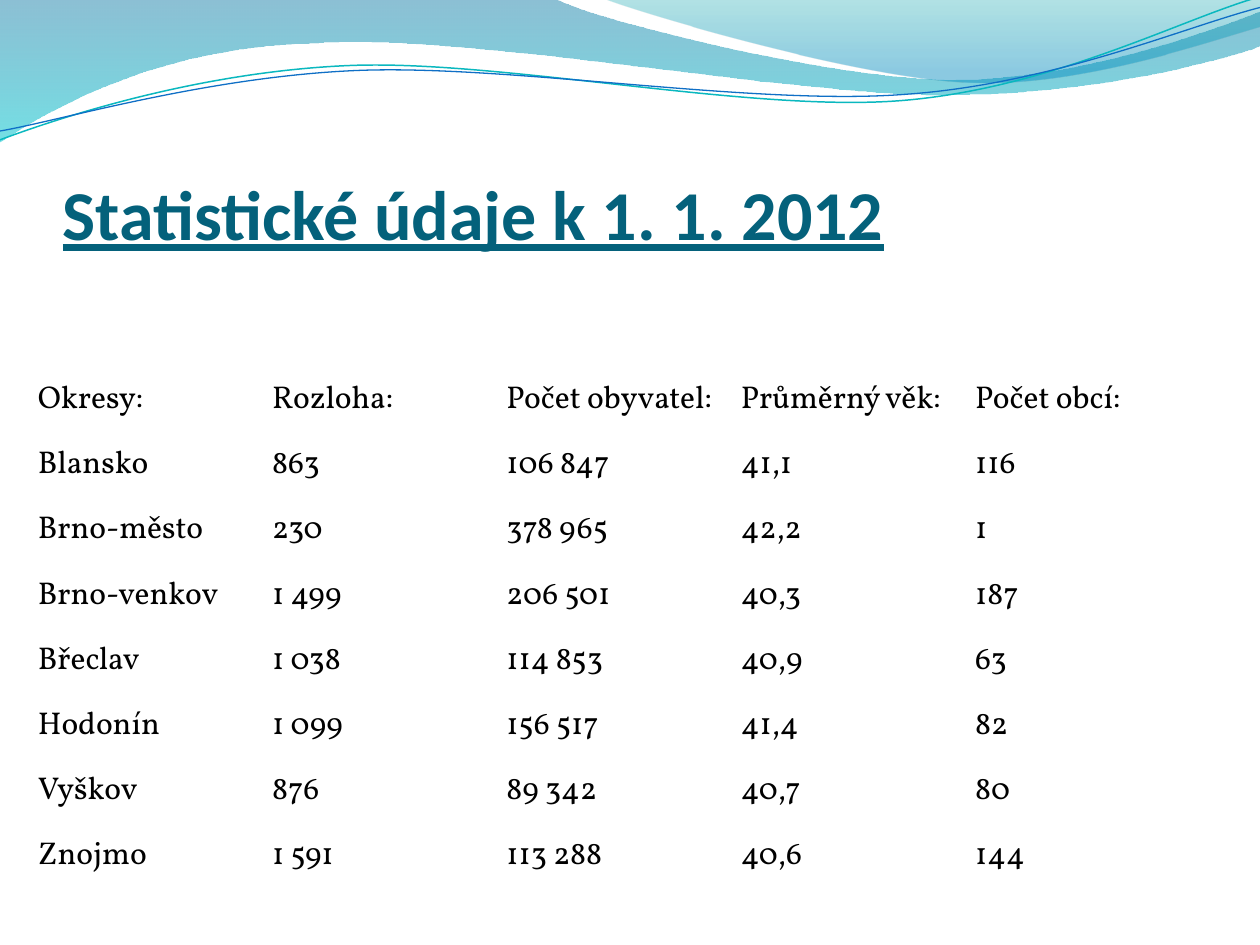
from math import cos, radians, sin

from lxml.etree import SubElement
from pptx import Presentation
from pptx.dml.color import RGBColor
from pptx.enum.text import MSO_ANCHOR as Anchor
from pptx.oxml.ns import qn
from pptx.util import Inches, Pt

COLORS = {
    "title": "04617B",
    "text": "000000",
    "deep": "0074A1",
    "aqua": "00C6CF",
    "teal": "00A1A9",
    "sky": "008BBF",
    "teal_line": "0AB8BF",
    "blue_line": "0F6FC6",
}
TILT = -2.7

LEFT_WAVE = [
    [(0, 0)],
    [(4.4, -0.01)],
    [(4.76, 0.17), (6.64, 0.63), (7.58, 0.63)],
    [(8.53, 0.63), (9.58, 0.26), (10, 0.09)],
    [(10.01, 0.36)],
    [(9.83, 0.44), (8.7, 0.76), (7.46, 0.75)],
    [(6.22, 0.75), (3.82, 0.28), (2.57, 0.34)],
    [(1.29, 0.36), (0.46, 0.83), (-0.01, 1.13)],
    [(0, 0)],
]
RIGHT_WAVE = [
    [(4.79, -0.01)],
    [(5.09, 0.11), (6.82, 0.62), (7.69, 0.65)],
    [(8.56, 0.69), (9.61, 0.32), (10, 0.21)],
    [(10, 0)],
    [(4.79, -0.01)],
]
TEAL_CURVE = [
    [(0, 1.11)],
    [(0.48, 0.93), (1.58, 0.57), (2.77, 0.52)],
    [(3.95, 0.47), (5.93, 0.89), (7.13, 0.8)],
    [(8.33, 0.71), (9.38, 0.15), (9.98, -0.02)],
]
BLUE_CURVE = [
    [(0, 1.04)],
    [(0.47, 0.96), (1.64, 0.61), (2.83, 0.56)],
    [(4.03, 0.51), (5.97, 0.84), (7.17, 0.75)],
    [(8.36, 0.67), (9.41, 0.21), (10, 0.06)],
]
DISTRICTS = [
    ("Okresy:", "Rozloha:", "Počet obyvatel:", "Průměrný věk:", "Počet obcí:"),
    ("Blansko", "863", "106 847", "41,1", "116"),
    ("Brno-město", "230", "378 965", "42,2", "1"),
    ("Brno-venkov", "1 499", "206 501", "40,3", "187"),
    ("Břeclav", "1 038", "114 853", "40,9", "63"),
    ("Hodonín", "1 099", "156 517", "41,4", "82"),
    ("Vyškov", "876", "89 342", "40,7", "80"),
    ("Znojmo", "1 591", "113 288", "40,6", "144"),
]


def color(name):
    return RGBColor.from_string(COLORS[name])


def level(outline, center):
    """Turn an outline about its center so that the shape's tilt restores it."""
    angle = radians(-TILT)
    center_x, center_y = center

    def turn(x, y):
        dx, dy = x - center_x, y - center_y
        return (center_x + dx * cos(angle) - dy * sin(angle),
                center_y + dx * sin(angle) + dy * cos(angle))

    return [[turn(*point) for point in segment] for segment in outline]


def add_outline(page, outline, close):
    """Draw one-point segments as lines and three-point segments as cubic curves."""
    points = [(Inches(x), Inches(y)) for segment in outline for x, y in segment]
    builder = page.shapes.build_freeform(*points[0])
    builder.add_line_segments(points[1:], close=close)
    shape = builder.convert_to_shape()
    shape.shadow.inherit = False
    lines = iter(list(shape._element.iter(qn("a:lnTo"))))
    for segment in outline[1:]:
        first, *others = [next(lines) for _ in segment]
        if others:
            first.tag = qn("a:cubicBezTo")
        for line in others:
            first.append(line[0])
            line.getparent().remove(line)
    return shape


def add_wave(page, outline, stops):
    wave = add_outline(page, outline, True)
    wave.line.fill.background()
    wave.fill.gradient()
    wave.fill.gradient_angle = 270
    for stop, (position, name, _) in zip(wave.fill.gradient_stops, stops):
        stop.position = position
        stop.color.rgb = color(name)
    tints = wave._element.spPr.iter(qn("a:srgbClr"))
    for tint, (_, _, opacity) in zip(tints, stops):
        SubElement(tint, qn("a:alpha"), val=str(opacity * 1000))


def add_curve(page, outline, center, name, width):
    curve = add_outline(page, level(outline, center), False)
    curve.rotation = TILT
    curve.fill.background()
    curve.line.color.rgb = color(name)
    curve.line.width = Pt(width)


def add_span(para, text, font, size, name):
    span = para.add_run()
    span.text = text
    span.font.name = font
    span.font.size = Pt(size)
    span.font.color.rgb = color(name)
    return span


def add_title(page, text):
    box = page.shapes.add_textbox(Inches(0.5), Inches(0.77), Inches(9), Inches(1.25))
    frame = box.text_frame
    frame.word_wrap = True
    frame.vertical_anchor = Anchor.BOTTOM
    frame.margin_left = frame.margin_right = frame.margin_bottom = 0
    frame.margin_top = Inches(0.05)
    span = add_span(frame.paragraphs[0], text, "Calibri", 40, "title")
    span.font.bold = True
    span.font.underline = True


def add_district_table(page, rows):
    table = page.shapes.add_table(
        len(rows), len(rows[0]),
        Inches(0.2), Inches(2.92), Inches(9.3), Inches(4.14)).table
    table.first_row = False
    table.horz_banding = False
    for row, values in enumerate(rows):
        for column, value in enumerate(values):
            cell = table.cell(row, column)
            cell.fill.background()
            cell.vertical_anchor = Anchor.MIDDLE
            add_span(cell.text_frame.paragraphs[0], value, "Vollkorn", 18, "text")


def main():
    deck = Presentation()
    deck.slide_width, deck.slide_height = Inches(10), Inches(7.5)
    page = deck.slides.add_slide(deck.slide_layouts[6])
    add_wave(page, LEFT_WAVE, [(0, "deep", 45), (1, "aqua", 55)])
    add_wave(page, RIGHT_WAVE, [(0, "teal", 30), (0.8, "sky", 45)])
    add_curve(page, TEAL_CURVE, (4.99, 0.58), "teal_line", 0.85)
    add_curve(page, BLUE_CURVE, (5, 0.59), "blue_line", 0.75)
    add_title(page, "Statistické údaje k 1. 1. 2012")
    add_district_table(page, DISTRICTS)
    deck.save("out.pptx")


if __name__ == "__main__":
    main()
